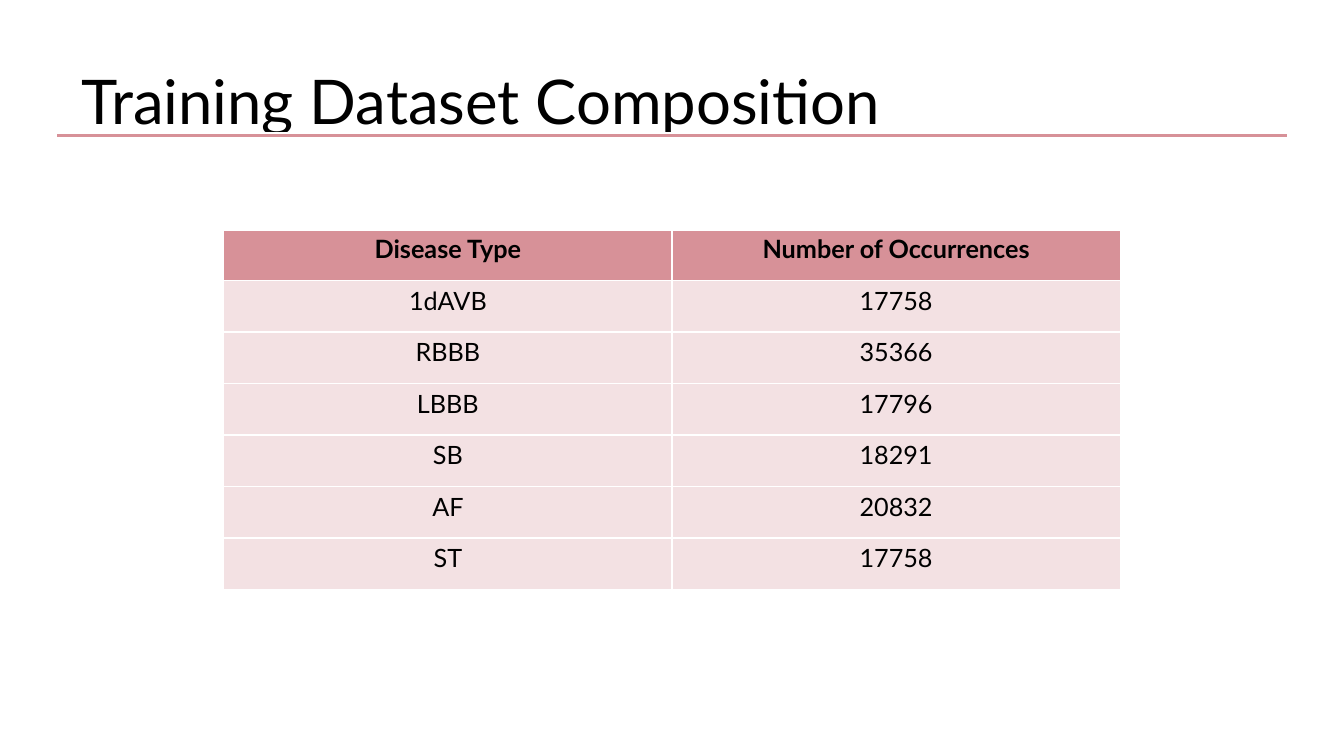
from lxml import etree
from pptx import Presentation
from pptx.dml.color import RGBColor
from pptx.enum import shapes, text
from pptx.oxml.ns import qn
from pptx.util import Inches, Pt

TITLE = "Training Dataset Composition"
ROWS = [
    ("", ""),
    ("Disease Type", "Number of Occurrences"),
    ("1dAVB", "17758"),
    ("RBBB", "35366"),
    ("LBBB", "17796"),
    ("SB", "18291"),
    ("AF", "20832"),
    ("ST", "17758"),
]
HEAD = 1
COLORS = {"ink": "000000", "rose": "D79198", "pale": "F3E1E3", "white": "FFFFFF"}
FONT = "Lato"


def color(name):
    return RGBColor.from_string(COLORS[name])


def paint(fill, name):
    fill.solid()
    fill.fore_color.rgb = color(name)


def style(par, size, bold=False):
    font = par.font
    for run in par.runs:
        font = run.font
    font.name, font.size, font.bold = FONT, Pt(size), bold
    font.color.rgb = color("ink")


def edge(cell, side, width):
    """Draw one white border; side is L, R, T or B, in that order per cell."""
    line = etree.SubElement(cell._tc.get_or_add_tcPr(), qn("a:ln" + side),
                            w=str(Pt(width)))
    fill = etree.SubElement(line, qn("a:solidFill"))
    etree.SubElement(fill, qn("a:srgbClr"), val=COLORS["white"])


def add_title(slide):
    box = slide.shapes.add_textbox(Inches(0.71), Inches(0.31), Inches(11.5), Inches(1.45))
    frame = box.text_frame
    frame.word_wrap = True
    frame.vertical_anchor = text.MSO_ANCHOR.MIDDLE
    frame.text = TITLE
    par = frame.paragraphs[0]
    par.line_spacing = 0.9
    style(par, 44)


def add_rule(slide):
    rule = slide.shapes.add_shape(shapes.MSO_SHAPE.RECTANGLE, Inches(0.56),
                                  Inches(1.32), Inches(12.22), Inches(0.05))
    rule.shadow.inherit = False
    paint(rule.fill, "rose")
    rule.line.color.rgb = color("white")
    rule.line.width = Pt(1.5)


def add_counts(slide):
    table = slide.shapes.add_table(len(ROWS), 2, Inches(2.22), Inches(1.76),
                                   Inches(8.89), Inches(4.09)).table
    for r, row in enumerate(ROWS):
        tint = "white" if r < HEAD else "rose" if r == HEAD else "pale"
        for c, word in enumerate(row):
            cell = table.cell(r, c)
            for side in "LRTB":
                edge(cell, side, 3 if r < HEAD and side == "B" else 1)
            paint(cell.fill, tint)
            cell.text_frame.text = word
            par = cell.text_frame.paragraphs[0]
            par.alignment = text.PP_ALIGN.CENTER
            style(par, 18, r == HEAD)


def main():
    deck = Presentation()
    deck.slide_width, deck.slide_height = Inches(13.33), Inches(7.5)
    slide = deck.slides.add_slide(deck.slide_layouts[6])
    paint(slide.background.fill, "white")
    add_title(slide)
    add_rule(slide)
    add_counts(slide)
    deck.save("out.pptx")


if __name__ == "__main__":
    main()
